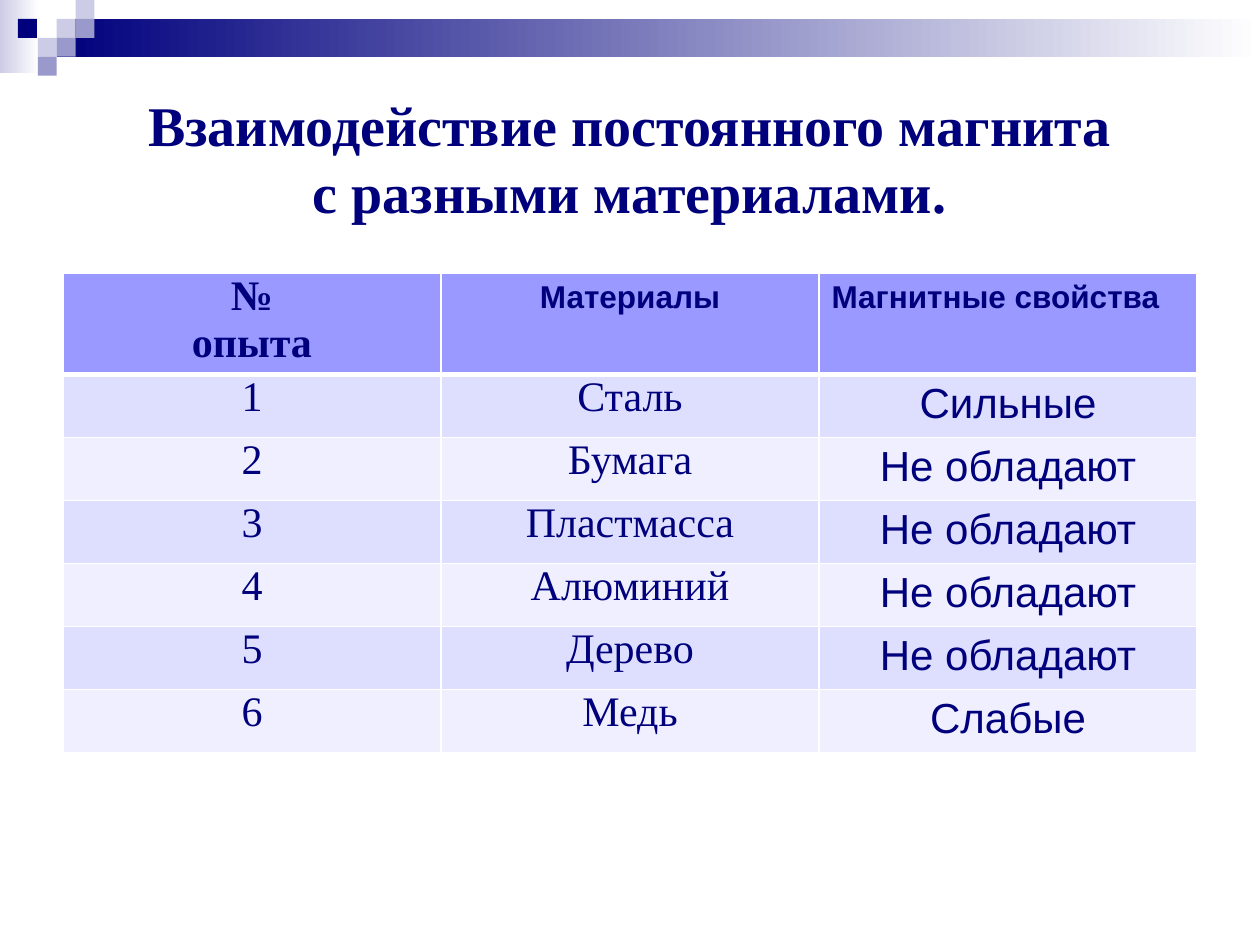
from lxml.etree import SubElement
from pptx import Presentation
from pptx.dml.color import RGBColor
from pptx.enum.shapes import MSO_SHAPE
from pptx.enum.text import MSO_ANCHOR, PP_ALIGN
from pptx.oxml.ns import qn
from pptx.util import Inches, Pt

NAVY, LILAC, VIOLET, WHITE = "00007D", "CCCCE6", "9999CC", "FFFFFF"
SERIF, SANS = "Times New Roman", "Arial"


def paint(fill, *colors):
    """Solid fill for one colour, left-to-right gradient for two."""
    if len(colors) == 1:
        fill.solid()
        fill.fore_color.rgb = RGBColor.from_string(colors[0])
        return
    fill.gradient()
    fill.gradient_angle = 0
    for stop, color in zip(fill.gradient_stops, colors):
        stop.color.rgb = RGBColor.from_string(color)


def style(p, font, size, bold, align=PP_ALIGN.CENTER):
    p.alignment = align
    for r in p.runs:
        r.font.name, r.font.size, r.font.bold = font, Pt(size), bold
        r.font.color.rgb = RGBColor.from_string(NAVY)


prs = Presentation()
prs.slide_width, prs.slide_height = Inches(10), Inches(7.5)
slide = prs.slides.add_slide(prs.slide_layouts[6])

# Corner ornament: column, row, width, height in squares of 0.15 inch
UNIT = Inches(0.15)
ornament = [
    (0, 0, 2.07, 3.87, LILAC, WHITE),
    (3, 1, 63.67, 2, NAVY, WHITE),
    (3, 1, 1, 1, LILAC),
    (4, 0, 1, 1, LILAC),
    (4, 1, 1, 1, VIOLET),
    (2, 2, 1, 1, LILAC),
    (0.95, 1, 1, 1, NAVY),
    (3, 2, 1, 1, VIOLET),
    (2, 3, 1, 1, VIOLET),
]
for col, row, w, h, *colors in ornament:
    box = [int(n * UNIT) for n in (col, row, w, h)]
    sp = slide.shapes.add_shape(MSO_SHAPE.RECTANGLE, *box)
    sp.shadow.inherit = False
    sp.line.fill.background()
    paint(sp.fill, *colors)

# Title
title = slide.shapes.add_textbox(Inches(0.5), Inches(0.5), Inches(9), Inches(1.5))
tf = title.text_frame
tf.word_wrap = True
tf.vertical_anchor = MSO_ANCHOR.MIDDLE
p = tf.paragraphs[0]
p.text = "Взаимодействие постоянного магнита\vс разными материалами."
style(p, SERIF, 32, True)

# Table of experiments
rows = [
    ("№\nопыта", "Материалы", "Магнитные свойства"),
    ("1", "Сталь", "Сильные"),
    ("2", "Бумага", "Не обладают"),
    ("3", "Пластмасса", "Не обладают"),
    ("4", "Алюминий", "Не обладают"),
    ("5", "Дерево", "Не обладают"),
    ("6", "Медь", "Слабые"),
]
HEAD_H, ROW_H = Inches(0.73), Inches(0.47)
table = slide.shapes.add_table(
    len(rows), 3, Inches(0.5), Inches(2.17), Inches(9), HEAD_H + 6 * ROW_H
).table
for i, texts in enumerate(rows):
    header = i == 0
    table.rows[i].height = HEAD_H if header else ROW_H
    for j, text in enumerate(texts):
        cell = table.cell(i, j)
        cell.text_frame.text = text
        serif = j == 0 or (j == 1 and not header)
        if serif:
            cell.margin_left = cell.margin_right = Inches(0.07)
            cell.margin_top = cell.margin_bottom = 0
        size = 24 if serif or not header else 18
        align = PP_ALIGN.LEFT if header and j == 2 else PP_ALIGN.CENTER
        for p in cell.text_frame.paragraphs:
            style(p, SERIF if serif else SANS, size, header, align)

        # White borders, thicker between the header and the body
        tc_pr = cell.fill._xPr
        for side in ("lnL", "lnR", "lnT", "lnB"):
            thick = (i, side) in ((0, "lnB"), (1, "lnT"))
            ln = SubElement(tc_pr, qn("a:" + side), w=str(Pt(3 if thick else 1)))
            SubElement(SubElement(ln, qn("a:solidFill")), qn("a:srgbClr"), val=WHITE)
        paint(cell.fill, "9999FF" if header else "DEDEFF" if i % 2 else "EFEFFF")

prs.save("out.pptx")
